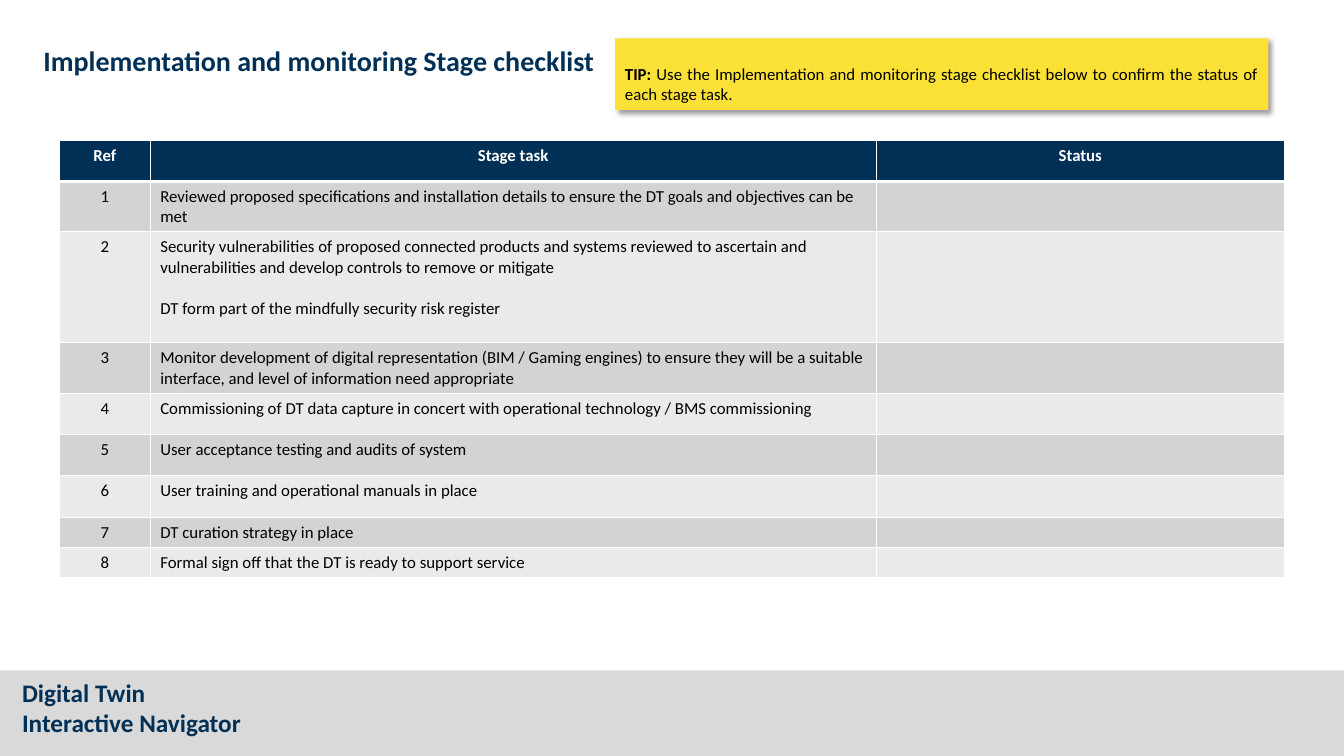
from lxml import etree
from pptx import Presentation
from pptx.dml.color import RGBColor
from pptx.enum.shapes import MSO_SHAPE
from pptx.enum.text import MSO_ANCHOR, PP_ALIGN
from pptx.oxml import parse_xml
from pptx.oxml.ns import nsdecls, qn
from pptx.util import Inches, Pt

RECT = MSO_SHAPE.RECTANGLE
TOP = MSO_ANCHOR.TOP
LEFT, CENTER, JUST = PP_ALIGN.LEFT, PP_ALIGN.CENTER, PP_ALIGN.JUSTIFY

FONT = "Calibri"
NAVY, BLACK, WHITE = "003056", "000000", "FFFFFF"
YELLOW, GREY = "FBE136", "D9D9D9"
BANDS = ["D2D3D5", "EAEAEB"]

COLS = [0.9, 7.2, 4.05]
HEADS = ["Ref", "Stage task", "Status"]
TASKS = [
    (0.5, "Reviewed proposed specifications and installation details to ensure "
          "the DT goals and objectives can be met"),
    (1.1, "Security vulnerabilities of proposed connected products and systems "
          "reviewed to ascertain and vulnerabilities and develop controls to "
          "remove or mitigate\nDT form part of the mindfully security risk register"),
    (0.5, "Monitor development of digital representation (BIM / Gaming engines) "
          "to ensure they will be a suitable interface, and level of information "
          "need appropriate"),
    (0.41, "Commissioning of DT data capture in concert with operational "
           "technology / BMS commissioning"),
    (0.41, "User acceptance testing and audits of system"),
    (0.41, "User training and operational manuals in place"),
    (0.29, "DT curation strategy in place"),
    (0.29, "Formal sign off that the DT is ready to support service"),
]


def rgb(code):
    return RGBColor.from_string(code)


def style(frame, size, color, bold=False, align=LEFT):
    for para in frame.paragraphs:
        para.alignment = align
        for font in [para.font] + [run.font for run in para.runs]:
            font.name = FONT
            font.size = Pt(size)
            font.bold = bold
            font.color.rgb = rgb(color)


def place(shape, left, top, width, height):
    shape.left, shape.top = Inches(left), Inches(top)
    shape.width, shape.height = Inches(width), Inches(height)


def add_rect(slide, left, top, width, height, fill):
    box = slide.shapes.add_shape(
        RECT, Inches(left), Inches(top), Inches(width), Inches(height))
    box.shadow.inherit = False
    box.fill.solid()
    box.fill.fore_color.rgb = rgb(fill)
    box.line.fill.background()
    return box


def add_shadow(shape):
    effects = shape._element.spPr.find(qn("a:effectLst"))
    effects.append(parse_xml(
        f'<a:outerShdw {nsdecls("a")} blurRad="{Pt(4)}" dist="{Pt(3)}" '
        f'dir="2700000" algn="tl" rotWithShape="0"><a:srgbClr val="{BLACK}">'
        '<a:alpha val="40000"/></a:srgbClr></a:outerShdw>'))


def add_title(slide):
    title = slide.shapes.title
    place(title, 0.33, 0.38, 6.34, 0.44)
    frame = title.text_frame
    frame.text = "Implementation and monitoring Stage checklist"
    frame.word_wrap = True
    frame.vertical_anchor = TOP
    style(frame, 20, NAVY, True)


def add_footer(slide):
    add_rect(slide, 0, 6.65, 13.33, 0.85, GREY)
    label = slide.shapes.add_textbox(
        Inches(0.12), Inches(6.67), Inches(4.05), Inches(0.71))
    frame = label.text_frame
    frame.word_wrap = True
    frame.text = "Digital Twin\nInteractive Navigator"
    style(frame, 18, NAVY, True)


def add_tip(slide):
    box = add_rect(slide, 6.1, 0.38, 6.48, 0.71, YELLOW)
    add_shadow(box)
    frame = box.text_frame
    frame.word_wrap = True
    frame.vertical_anchor = TOP
    frame.margin_top = Inches(0.25)
    frame.margin_bottom = 0
    frame.text = "TIP: "
    frame.paragraphs[0].add_run().text = (
        "Use the Implementation and monitoring stage checklist below to "
        "confirm the status of each stage task.")
    style(frame, 12, BLACK, align=JUST)
    frame.paragraphs[0].runs[0].font.bold = True


def set_edges(cell, top, bottom):
    props = cell._tc.get_or_add_tcPr()
    for side, width in zip("LRTB", (1, 1, top, bottom)):
        line = etree.SubElement(props, qn(f"a:ln{side}"), w=str(Pt(width)))
        fill = etree.SubElement(line, qn("a:solidFill"))
        etree.SubElement(fill, qn("a:srgbClr"), val=WHITE)


def add_table(slide):
    rows = [(0.41, HEADS)]
    rows += [(high, [str(num), task, ""])
             for num, (high, task) in enumerate(TASKS, 1)]
    table = slide.shapes.add_table(
        len(rows), len(COLS), Inches(0.59), Inches(1.39),
        Inches(sum(COLS)), Inches(sum(high for high, _ in rows))).table
    for col, width in zip(table.columns, COLS):
        col.width = Inches(width)
    for r, (high, texts) in enumerate(rows):
        table.rows[r].height = Inches(high)
        head = r == 0
        for c, text in enumerate(texts):
            cell = table.cell(r, c)
            set_edges(cell, 3 if r == 1 else 1, 3 if head else 1)
            cell.fill.solid()
            cell.fill.fore_color.rgb = rgb(NAVY if head else BANDS[(r - 1) % 2])
            cell.text_frame.text = text
            style(cell.text_frame, 12, WHITE if head else BLACK, head,
                  CENTER if head or c == 0 else LEFT)
            for para in cell.text_frame.paragraphs[1:]:
                para.space_before = Pt(14.6)


def main():
    deck = Presentation()
    deck.slide_width, deck.slide_height = Inches(13.33), Inches(7.5)
    slide = deck.slides.add_slide(deck.slide_layouts[5])
    add_footer(slide)
    add_table(slide)
    add_title(slide)
    add_tip(slide)
    deck.save("out.pptx")


if __name__ == "__main__":
    main()
